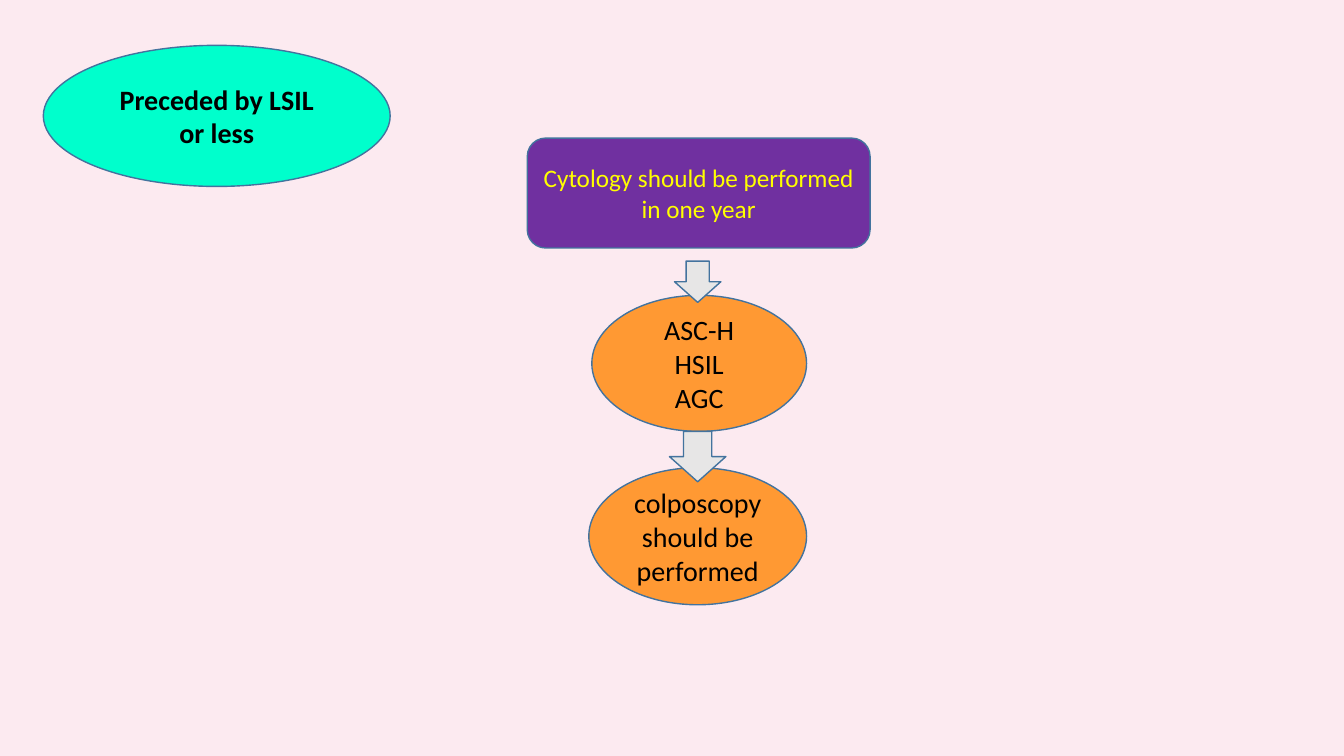
from dataclasses import dataclass

from pptx import Presentation
from pptx.dml.color import RGBColor
from pptx.enum.shapes import MSO_SHAPE
from pptx.enum.text import MSO_ANCHOR, PP_ALIGN
from pptx.slide import Slide
from pptx.util import Inches, Pt

ELLIPSE = MSO_SHAPE.OVAL
ROUNDED = MSO_SHAPE.ROUNDED_RECTANGLE
DOWN_ARROW = MSO_SHAPE.DOWN_ARROW
MIDDLE = MSO_ANCHOR.MIDDLE
CENTER = PP_ALIGN.CENTER


@dataclass(frozen=True)
class Theme:
    font: str = "Calibri"
    background: str = "FCEAF0"
    outline: str = "43739E"
    history: str = "00FFCC"
    action: str = "7030A0"
    finding: str = "FF9933"
    arrow: str = "E7E6E6"
    dark_text: str = "000000"
    action_text: str = "FFFF00"
    large: int = 20
    medium: int = 18
    line_width: int = 1


THEME = Theme()


@dataclass(frozen=True)
class Node:
    kind: MSO_SHAPE
    left: float
    top: float
    width: float
    height: float
    fill: str
    text: str = ""
    color: str = THEME.dark_text
    size: int = THEME.large
    bold: bool = False


NODES = [
    # Patient history
    Node(ELLIPSE, 0.43, 0.45, 3.44, 1.4, THEME.history,
         "Preceded by LSIL or less", bold=True),
    # Follow-up steps
    Node(ROUNDED, 5.23, 1.37, 3.4, 1.09, THEME.action,
         "Cytology should be performed in one year",
         THEME.action_text, THEME.medium),
    Node(ELLIPSE, 5.87, 2.93, 2.13, 1.35, THEME.finding, "ASC-H\nHSIL\nAGC"),
    Node(ELLIPSE, 5.84, 4.64, 2.16, 1.36, THEME.finding,
         "colposcopy should be performed"),
    # Arrows between the steps
    Node(DOWN_ARROW, 6.69, 2.59, 0.46, 0.41, THEME.arrow),
    Node(DOWN_ARROW, 6.64, 4.28, 0.56, 0.5, THEME.arrow),
]


def draw_node(page: Slide, node: Node) -> None:
    shape = page.shapes.add_shape(
        node.kind, Inches(node.left), Inches(node.top),
        Inches(node.width), Inches(node.height))
    shape.shadow.inherit = False
    shape.fill.solid()
    shape.fill.fore_color.rgb = RGBColor.from_string(node.fill)
    shape.line.color.rgb = RGBColor.from_string(THEME.outline)
    shape.line.width = Pt(THEME.line_width)
    if not node.text:
        return

    frame = shape.text_frame
    frame.word_wrap = True
    frame.vertical_anchor = MIDDLE
    frame.text = node.text
    for para in frame.paragraphs:
        para.alignment = CENTER
        for span in para.runs:
            span.font.name = THEME.font
            span.font.size = Pt(node.size)
            span.font.bold = node.bold
            span.font.color.rgb = RGBColor.from_string(node.color)


def main() -> None:
    deck = Presentation()
    deck.slide_width = Inches(13.33)
    deck.slide_height = Inches(7.5)
    page = deck.slides.add_slide(deck.slide_layouts[6])
    page.background.fill.solid()
    page.background.fill.fore_color.rgb = RGBColor.from_string(THEME.background)
    for node in NODES:
        draw_node(page, node)
    deck.save("out.pptx")


if __name__ == "__main__":
    main()
